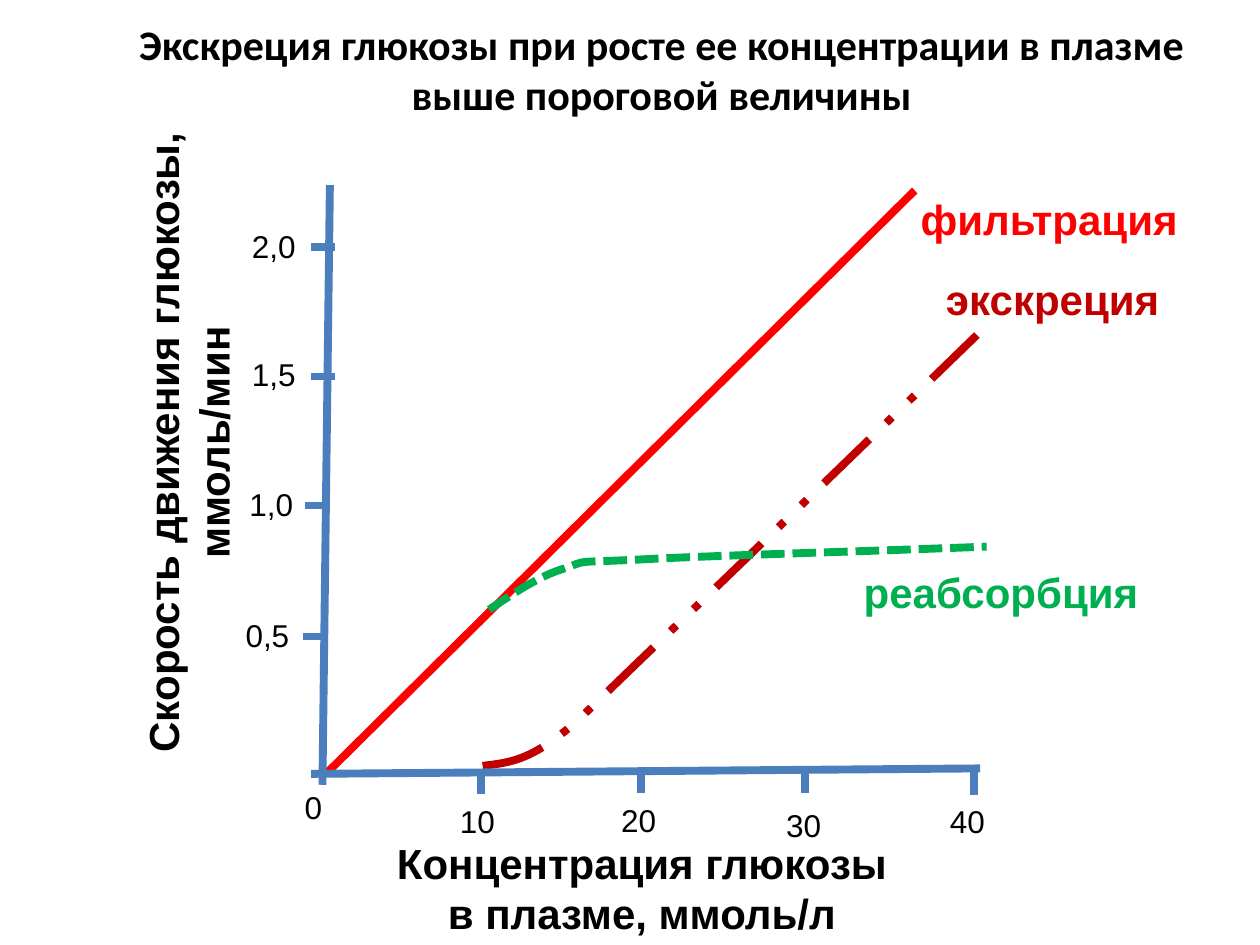
"""Build a one-slide line diagram of glucose filtration, reabsorption and excretion."""
from dataclasses import dataclass

from lxml import etree
from pptx import Presentation
from pptx.dml.color import RGBColor
from pptx.enum.dml import MSO_LINE
from pptx.enum.shapes import MSO_CONNECTOR
from pptx.enum.text import MSO_ANCHOR, PP_ALIGN
from pptx.oxml.ns import qn
from pptx.util import Cm, Pt

STRAIGHT = MSO_CONNECTOR.STRAIGHT
DASH = MSO_LINE.SQUARE_DOT
DASH_DOT_DOT = MSO_LINE.DASH_DOT_DOT
LEFT, CENTER = PP_ALIGN.LEFT, PP_ALIGN.CENTER
TOP, MIDDLE = MSO_ANCHOR.TOP, MSO_ANCHOR.MIDDLE


@dataclass(frozen=True)
class Theme:
    ink: str = "000000"
    axis: str = "4B7EBC"
    filtration: str = "FF0000"
    excretion: str = "C00000"
    reabsorption: str = "00B050"
    title_font: str = "Calibri"
    body_font: str = "Arial"
    heading_size: float = 24
    tick_size: float = 18
    stroke: float = 4.5


class Diagram:
    def __init__(self, theme, page):
        self.theme = theme
        self.page = page
        self.canvas = page.shapes

    def start_group(self):
        self.canvas = self.page.shapes.add_group_shape().shapes

    def end_group(self):
        self.canvas = self.page.shapes

    def apply(self, target, values):
        for name, value in values.items():
            setattr(target, name, value)

    def stroke(self, shape, color, dash=None):
        shape.line.color.rgb = RGBColor.from_string(color)
        self.apply(shape.line, {"width": Pt(self.theme.stroke), "dash_style": dash})

    def line(self, start, end, color):
        connector = self.canvas.add_connector(STRAIGHT, *map(Cm, start + end))
        self.stroke(connector, color)
        etree.SubElement(connector._element.spPr, qn("a:effectLst"))

    def curve(self, start, points, color, dash):
        builder = self.canvas.build_freeform(*map(Cm, start))
        builder.add_line_segments([(Cm(x), Cm(y)) for x, y in points], close=False)
        shape = builder.convert_to_shape()
        shape.fill.background()
        self.stroke(shape, color, dash)
        shape.shadow.inherit = False
        segments = list(shape._element.iter(qn("a:lnTo")))
        for index in range(0, len(segments), 3):
            bezier = etree.Element(qn("a:cubicBezTo"))
            segments[index].addprevious(bezier)
            for segment in segments[index:index + 3]:
                bezier.append(segment[0])
                segment.getparent().remove(segment)

    def text(self, words, place, size, color=None, font=None, bold=True,
             align=CENTER, anchor=TOP, wrap=True, turned=False):
        box = self.canvas.add_textbox(*map(Cm, place))
        self.apply(box.text_frame, {"word_wrap": wrap, "vertical_anchor": anchor})
        if turned:
            box.text_frame._txBody.bodyPr.set("vert", "vert270")
        para = box.text_frame.paragraphs[0]
        para.alignment = align
        span = para.add_run()
        span.text = words
        span.font.color.rgb = RGBColor.from_string(color or self.theme.ink)
        self.apply(span.font, {"name": font or self.theme.body_font,
                               "size": Pt(size), "bold": bold})

    def tick_label(self, words, left, top, width):
        self.text(words, (left, top, width, 1.02), self.theme.tick_size,
                  bold=False, align=LEFT, wrap=False)


def main():
    deck = Presentation()
    deck.slide_width, deck.slide_height = Cm(25.4), Cm(19.05)
    theme = Theme()
    diagram = Diagram(theme, deck.slides.add_slide(deck.slide_layouts[6]))
    heading = theme.heading_size

    diagram.text("Экскреция глюкозы при росте ее концентрации в плазме выше пороговой величины",
                 (1.91, 0, 22.86, 2.77), heading, font=theme.title_font, anchor=MIDDLE)

    diagram.line((6.6, 15.57), (18.44, 3.84), theme.filtration)
    diagram.curve((9.73, 15.44),
                  [(10.11, 15.39), (10.49, 15.37), (11.05, 14.99),
                   (11.61, 14.6), (11.61, 14.55), (13.06, 13.16),
                   (14.5, 11.79), (17.12, 9.25), (19.74, 6.71)],
                  theme.excretion, DASH_DOT_DOT)
    diagram.curve((9.86, 12.29),
                  [(10.36, 11.96), (10.87, 11.61), (11.38, 11.46),
                   (11.89, 11.28), (11.48, 11.35), (12.9, 11.28),
                   (14.33, 11.2), (17.09, 11.13), (19.89, 11.02)],
                  theme.reabsorption, DASH)

    diagram.start_group()
    diagram.line((19.76, 15.49), (6.27, 15.6), theme.axis)
    for words, x, y, left, top in (("10", 9.7, 15.54, 9.02, 16.05),
                                   ("20", 12.92, 15.52, 12.27, 16.03),
                                   ("30", 16.23, 15.52, 15.6, 16.13),
                                   ("40", 19.63, 15.57, 18.9, 16.05)):
        diagram.line((x, y), (x, y + 0.46), theme.axis)
        diagram.tick_label(words, left, top, 1.22)

    diagram.start_group()
    diagram.line((6.65, 3.73), (6.5, 15.82), theme.axis)
    for words, x, y, left, top in (("2,0", 6.76, 4.98, 4.83, 4.45),
                                   ("1,5", 6.76, 7.59, 4.83, 7.04),
                                   ("1,0", 6.65, 10.19, 4.78, 9.65),
                                   ("0,5", 6.6, 12.83, 4.7, 12.29)):
        diagram.line((x, y), (x - 0.5, y), theme.axis)
        diagram.tick_label(words, left, top, 1.4)
    diagram.tick_label("0", 5.89, 15.77, 0.86)
    diagram.end_group()

    diagram.text("Концентрация глюкозы в плазме, ммоль/л", (7.44, 16.76, 11, 2.31), heading)
    diagram.text("Скорость движения глюкозы, ммоль/мин", (2.64, 2.29, 2.57, 13.26),
                 heading, turned=True)
    for words, left, top, color in (("фильтрация", 17.48, 3.78, theme.filtration),
                                    ("экскреция", 17.55, 5.38, theme.excretion),
                                    ("реабсорбция", 16.51, 11.3, theme.reabsorption)):
        diagram.text(words, (left, top, 7.34, 1.27), heading, color)

    deck.save("out.pptx")


if __name__ == "__main__":
    main()
